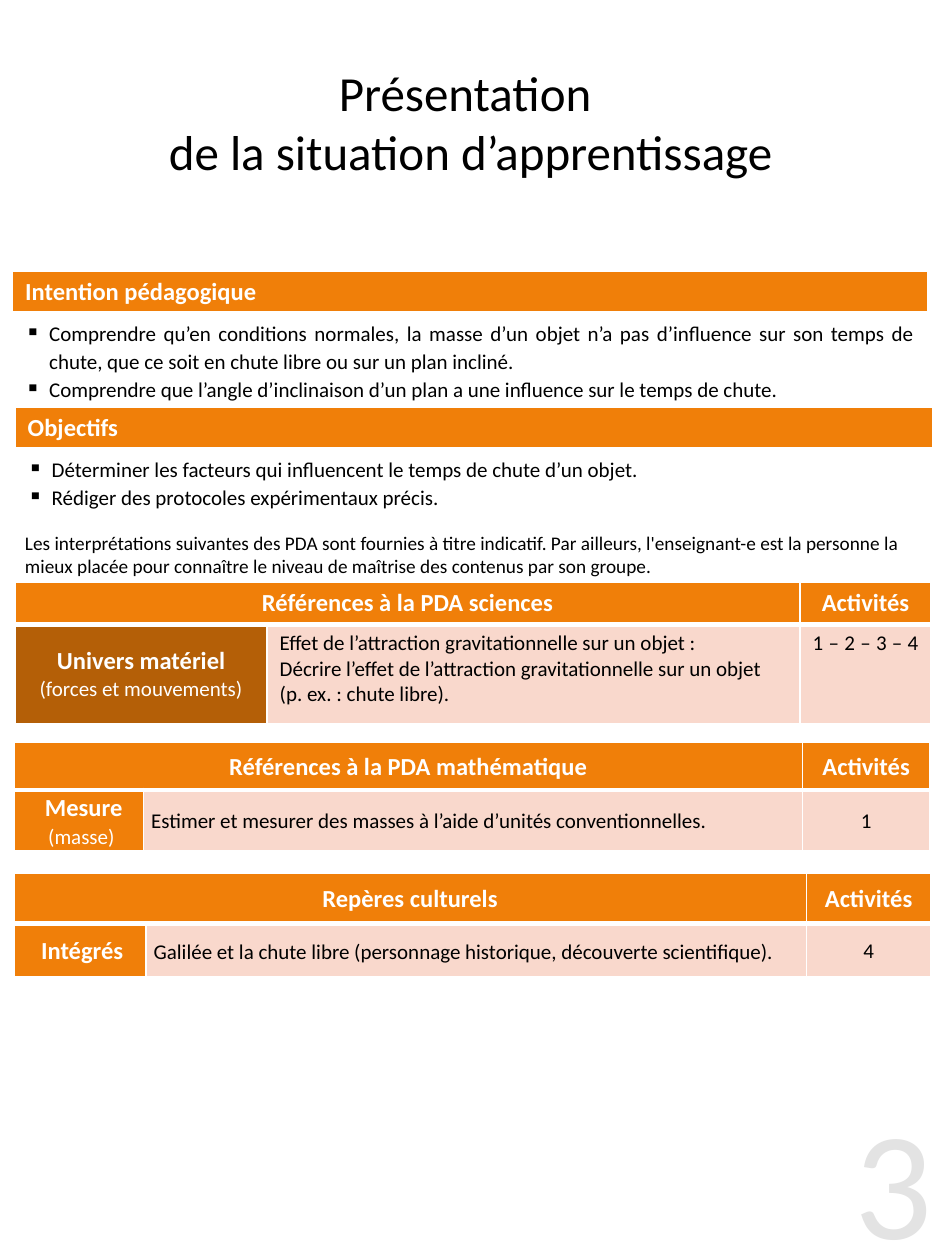
from lxml import etree
from pptx import Presentation
from pptx import util as u
from pptx.dml.color import RGBColor
from pptx.enum import text
from pptx.oxml.ns import qn

COLORS = {"black": "000000", "white": "FFFFFF", "orange": "F07F09",
          "brown": "B45F07", "pink": "F9D8CC", "grey": "E3E3E3"}
AL, MID, TOP = text.PP_ALIGN, text.MSO_ANCHOR.MIDDLE, text.MSO_ANCHOR.TOP

prs = Presentation()
prs.slide_width, prs.slide_height = u.Inches(7.5), u.Inches(10)
s = prs.slides.add_slide(prs.slide_layouts[6])
COL, ROW = prs.slide_width / 750, prs.slide_height / 1000

STYLES = {
    "title": dict(size=28, bold=False, color="black", alignment=AL.CENTER),
    "note": dict(size=11, bold=False, color="black", alignment=AL.LEFT),
    "number": dict(size=88, bold=False, color="grey", alignment=AL.RIGHT),
    "band": dict(size=14, bold=True, color="white", alignment=AL.LEFT),
    "head": dict(size=14, bold=True, color="white", alignment=AL.CENTER),
    "sub": dict(size=12, bold=False, color="white", alignment=AL.CENTER),
    "body": dict(size=12, bold=False, color="black", alignment=AL.LEFT),
    "mark": dict(size=12, bold=False, color="black", alignment=AL.CENTER),
    "just": dict(size=12, bold=False, color="black", alignment=AL.JUSTIFY),
}


def write(tf, lines, spacing=1.0, indent=0, bullet=None):
    for i, (words, style) in enumerate(lines):
        p = tf.paragraphs[0] if i == 0 else tf.add_paragraph()
        pPr = p._p.get_or_add_pPr()
        if indent:
            pPr.set("marL", str(int(indent * COL)))
            pPr.set("indent", str(int(-indent * COL)) if bullet else "0")
        if bullet:
            etree.SubElement(pPr, qn("a:buChar")).set("char", bullet)
        fmt = STYLES[style]
        p.alignment, p.line_spacing = fmt["alignment"], spacing
        p.text = words
        for r in p.runs:
            r.font.name, r.font.size, r.font.bold = "Calibri", u.Pt(fmt["size"]), fmt["bold"]
            r.font.color.rgb = RGBColor.from_string(COLORS[fmt["color"]])


def paint(cell, fill, anchor, bottom=1, tight=False):
    cell.fill.solid()
    cell.fill.fore_color.rgb = RGBColor.from_string(COLORS[fill])
    cell.vertical_anchor = anchor
    if tight:
        cell.margin_left = cell.margin_right = int(6 * COL)
        cell.margin_top = cell.margin_bottom = 0
    tcPr = cell._tc.get_or_add_tcPr()
    for i, side in enumerate("LRTB"):
        ln = etree.Element(qn("a:ln" + side), w=str(u.Pt(bottom if side == "B" else 1)))
        sf = etree.SubElement(ln, qn("a:solidFill"))
        etree.SubElement(sf, qn("a:srgbClr"), val=COLORS["white"])
        tcPr.insert(i, ln)


boxes = [
    (8, 49, 731, 95, MID, "title", "Présentation \vde la situation d’apprentissage"),
    (10, 417, 726, 47, TOP, "note",
     "Les interprétations suivantes des PDA sont fournies à titre indicatif.\u00a0Par ailleurs, "
     "l'enseignant-e est la personne la mieux placée pour connaître le niveau de maîtrise "
     "des contenus par son groupe."),
    (590, 870, 160, 130, MID, "number", "3"),
]
for x, y, w, h, anchor, style, words in boxes:
    tf = s.shapes.add_textbox(int(x * COL), int(y * ROW), int(w * COL), int(h * ROW)).text_frame
    tf.word_wrap, tf.vertical_anchor = True, anchor
    write(tf, [(words, style)])

sections = [
    (10, 215, 726, 108, "Intention pédagogique", "just", [
        "Comprendre qu’en conditions normales, la masse d’un objet n’a pas d’influence "
        "sur son temps de chute, que ce soit en chute libre ou sur un plan incliné. ",
        "Comprendre que l’angle d’inclinaison d’un plan a une influence sur le temps de chute."]),
    (12, 323, 728, 98, "Objectifs", "body", [
        "Déterminer les facteurs qui influencent le temps de chute d’un objet.",
        "Rédiger des protocoles expérimentaux précis."]),
]
for x, y, w, h, heading, style, items in sections:
    tbl = s.shapes.add_table(2, 1, int(x * COL), int(y * ROW), int(w * COL), int(h * ROW)).table
    for row, height in zip(tbl.rows, (30, 65)):
        row.height = int(height * ROW)
    paint(tbl.cell(0, 0), "orange", TOP, bottom=3)
    write(tbl.cell(0, 0).text_frame, [(heading, "band")])
    paint(tbl.cell(1, 0), "white", TOP)
    write(tbl.cell(1, 0).text_frame, [(t, style) for t in items], 1.1, 19, "▪")

references = [
    dict(x=12, y=462, cols=(200, 423, 104), rows=(27, 79), tight=False, side="brown",
         anchor=TOP, spacing=(1, 1), heading="Références à la PDA sciences",
         label=[("Univers matériel", "head"), ("(forces et mouvements)", "sub")],
         content=["Effet de l’attraction gravitationnelle sur un objet :",
                  "Décrire l’effet de l’attraction gravitationnelle sur un objet "
                  "(p. ex. : chute libre)."],
         activity=("1 – 2 – 3 – 4 ", "just")),
    dict(x=11, y=589, cols=(103, 523, 101), rows=(38, 48), tight=True, side="orange",
         anchor=MID, spacing=(1.07, 1.07), heading="Références à la PDA mathématique",
         label=[("Mesure", "head"), ("(masse) ", "sub")],
         content=["Estimer et mesurer des masses à l’aide d’unités conventionnelles."],
         activity=("1", "mark")),
    dict(x=11, y=693, cols=(105, 524, 99), rows=(40, 42), tight=True, side="orange",
         anchor=MID, spacing=(1.07, 1.15), heading="Repères culturels",
         label=[("Intégrés ", "head")],
         content=["Galilée et la chute libre (personnage historique, découverte scientifique)."],
         activity=("4", "mark")),
]
for ref in references:
    tbl = s.shapes.add_table(2, 3, int(ref["x"] * COL), int(ref["y"] * ROW),
                             int(sum(ref["cols"]) * COL), int(sum(ref["rows"]) * ROW)).table
    for col, width in zip(tbl.columns, ref["cols"]):
        col.width = int(width * COL)
    for row, height in zip(tbl.rows, ref["rows"]):
        row.height = int(height * ROW)
    tight, (ls, content_ls) = ref["tight"], ref["spacing"]
    for j in range(3):
        paint(tbl.cell(0, j), "orange", MID, 3, tight)
    tbl.cell(0, 0).merge(tbl.cell(0, 1))
    write(tbl.cell(0, 0).text_frame, [(ref["heading"], "head")], ls)
    write(tbl.cell(0, 2).text_frame, [("Activités", "head")], ls)
    body = [
        ("side", MID, ref["label"], ls, 8 if tight else 0),
        ("pink", ref["anchor"], [(t, "body") for t in ref["content"]], content_ls, 0),
        ("pink", ref["anchor"], [ref["activity"]], ls, 0),
    ]
    for j, (fill, anchor, lines, spacing, indent) in enumerate(body):
        paint(tbl.cell(1, j), ref.get(fill, fill), anchor, 1, tight)
        write(tbl.cell(1, j).text_frame, lines, spacing, indent)

prs.save("out.pptx")
